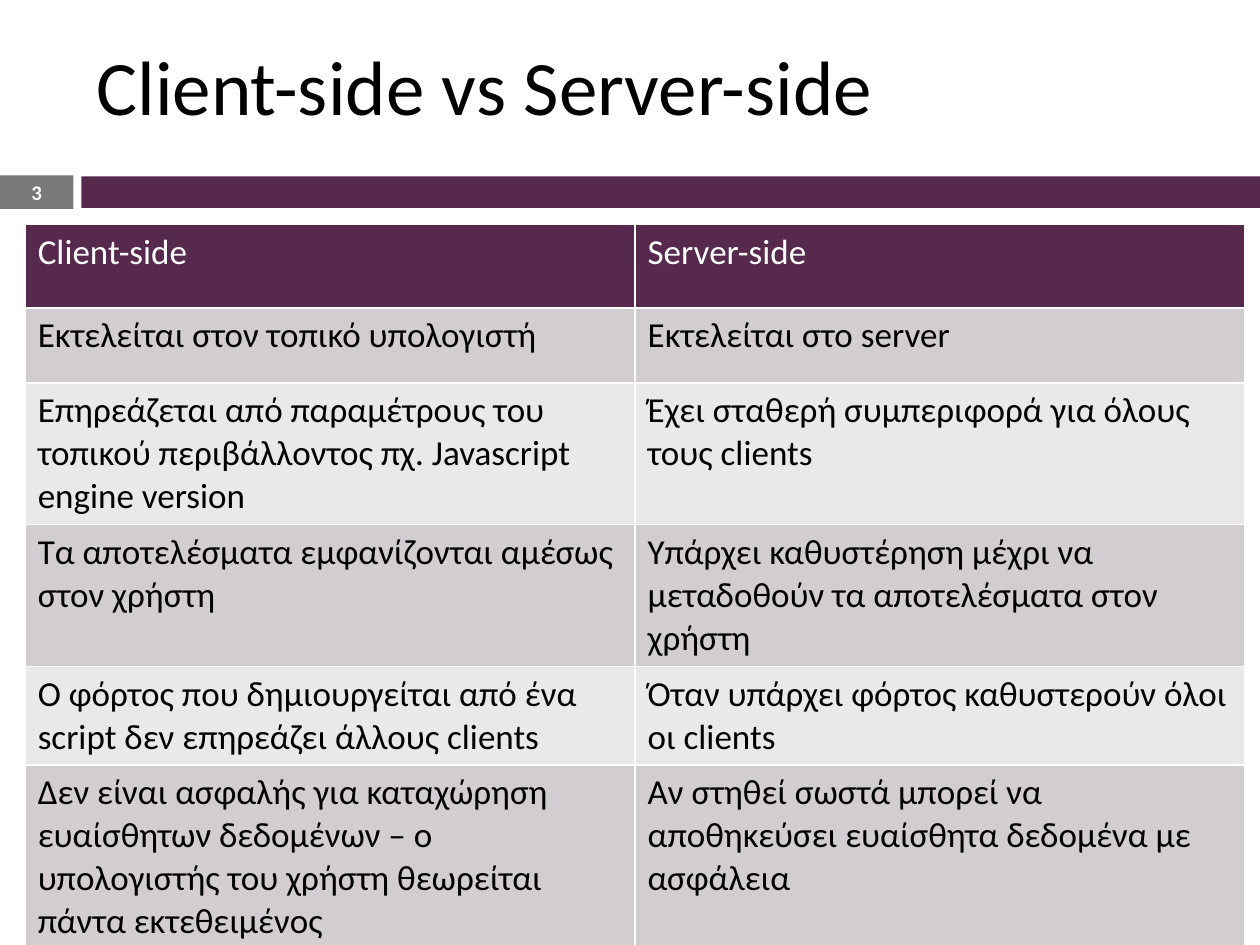
"""Build a slide with a table comparing client-side and server-side scripts."""
from lxml import etree
from pptx import Presentation
from pptx.dml.color import RGBColor
from pptx.enum.shapes import MSO_SHAPE
from pptx.enum.text import MSO_ANCHOR, MSO_AUTO_SIZE, PP_ALIGN
from pptx.oxml.ns import qn
from pptx.util import Pt

RECTANGLE = MSO_SHAPE.RECTANGLE
TOP, MIDDLE = MSO_ANCHOR.TOP, MSO_ANCHOR.MIDDLE
LEFT, CENTER = PP_ALIGN.LEFT, PP_ALIGN.CENTER
NO_AUTOFIT = MSO_AUTO_SIZE.NONE
TITLE_ONLY = 5

FONT = "Calibri"
COLORS = {
    "plum": "57294C",
    "grey": "797979",
    "dark_band": "D1CDD0",
    "light_band": "EAE8E9",
    "white": "FFFFFF",
    "black": "000000",
}
COMPARISON = [
    (47.5, "Client-side", "Server-side"),
    (43, "Εκτελείται στον τοπικό υπολογιστή", "Εκτελείται στο server"),
    (81, "Επηρεάζεται από παραμέτρους του τοπικού περιβάλλοντος πχ. Javascript engine version",
     "Έχει σταθερή συμπεριφορά για όλους τους clients"),
    (81, "Τα αποτελέσματα εμφανίζονται αμέσως στον χρήστη",
     "Υπάρχει καθυστέρηση μέχρι να μεταδοθούν τα αποτελέσματα στον χρήστη"),
    (56, "Ο φόρτος που δημιουργείται από ένα script δεν επηρεάζει άλλους clients",
     "Όταν υπάρχει φόρτος καθυστερούν όλοι οι clients"),
    (103, "Δεν είναι ασφαλής για καταχώρηση ευαίσθητων δεδομένων – ο υπολογιστής του χρήστη "
     "θεωρείται πάντα εκτεθειμένος",
     "Αν στηθεί σωστά μπορεί να αποθηκεύσει ευαίσθητα δεδομένα με ασφάλεια"),
]


def write(frame, text, size=20, color="black", bold=False, align=LEFT, anchor=TOP):
    frame.word_wrap = True
    frame.vertical_anchor = anchor
    paragraph = frame.paragraphs[0]
    paragraph.alignment = align
    run = paragraph.add_run()
    run.text = text
    run.font.name = FONT
    run.font.size = Pt(size)
    run.font.bold = bold
    run.font.color.rgb = RGBColor.from_string(COLORS[color])


def add_border(cell, width=1, color="white"):
    properties = cell._tc.get_or_add_tcPr()
    for position, side in enumerate(("lnL", "lnR", "lnT", "lnB")):
        line = etree.Element(qn(f"a:{side}"), w=str(Pt(width)))
        fill = etree.SubElement(line, qn("a:solidFill"))
        etree.SubElement(fill, qn("a:srgbClr"), val=COLORS[color])
        properties.insert(position, line)


deck = Presentation()
deck.slide_width, deck.slide_height = Pt(720), Pt(540)
slide = deck.slides.add_slide(deck.slide_layouts[TITLE_ONLY])

title = slide.shapes.title
title.left, title.top, title.width, title.height = Pt(48), Pt(9.5), Pt(642), Pt(78)
title.text_frame.auto_size = NO_AUTOFIT
write(title.text_frame, "Client-side vs Server-side", size=44, anchor=MIDDLE)

bands = []
for left, top, width, height, color in [
    (46.5, 100.8, 673.5, 18, "plum"),
    (0, 100.2, 42, 19.2, "grey"),
]:
    band = slide.shapes.add_shape(RECTANGLE, Pt(left), Pt(top), Pt(width), Pt(height))
    band.shadow.inherit = False
    band.fill.solid()
    band.fill.fore_color.rgb = RGBColor.from_string(COLORS[color])
    band.line.fill.background()
    bands.append(band)

page_number = bands[-1].text_frame
page_number.margin_top = page_number.margin_bottom = 0
write(page_number, "3", size=11.9, color="white", bold=True, align=CENTER, anchor=MIDDLE)

total_height = sum(height for height, *_ in COMPARISON)
comparison = slide.shapes.add_table(
    len(COMPARISON), 2, Pt(14.4), Pt(128.4), Pt(697), Pt(total_height)
).table
for row_index, (height, *sides) in enumerate(COMPARISON):
    comparison.rows[row_index].height = Pt(height)
    is_header = row_index == 0
    band_color = "plum" if is_header else "dark_band" if row_index % 2 else "light_band"
    for column_index, text in enumerate(sides):
        cell = comparison.cell(row_index, column_index)
        cell.fill.solid()
        cell.fill.fore_color.rgb = RGBColor.from_string(COLORS[band_color])
        add_border(cell)
        write(cell.text_frame, text, color="white" if is_header else "black")

deck.save("out.pptx")
